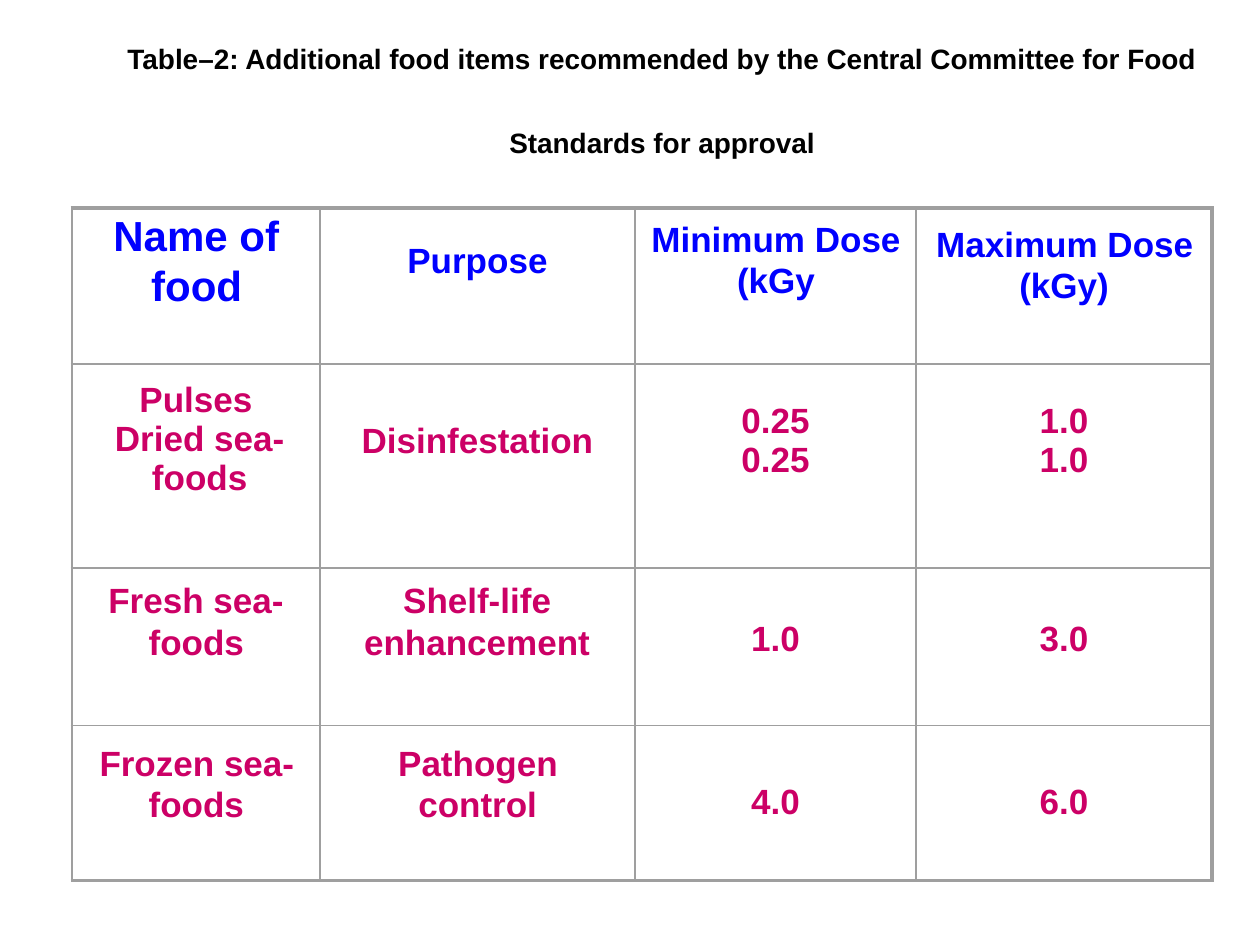
import pptx
import pptx.dml.color
import pptx.enum.text
import pptx.oxml
import pptx.oxml.ns
import pptx.util

Inches, Pt = pptx.util.Inches, pptx.util.Pt
CENTER = pptx.enum.text.PP_ALIGN.CENTER
LEFT = pptx.enum.text.PP_ALIGN.LEFT
RGBColor = pptx.dml.color.RGBColor
BLACK = RGBColor(0x00, 0x00, 0x00)
BLUE = RGBColor(0x00, 0x00, 0xFF)
MAGENTA = RGBColor(0xCC, 0x00, 0x66)
GRAY = RGBColor(0x9F, 0x9F, 0x9F)

COLS = [1.97, 2.5, 2.23, 2.35]
ROWS = [1.24, 1.62, 1.25, 1.23]

# Each cell: lines, top margin, left margin, first-line indent, alignment
CELLS = [
    [(["Name of", "food"], 0.02, 0.63, -0.3, LEFT),
     (["Purpose"], 0.27, 0, 0, CENTER),
     (["Minimum Dose", "(kGy"], 0.08, 0.81, -0.68, LEFT),
     (["Maximum Dose", "(kGy)"], 0.12, 0.82, -0.66, LEFT)],
    [(["Pulses", "Dried sea-", "foods"], 0.13, 0.06, -0.2, CENTER),
     (["Disinfestation"], 0.46, 0, 0, CENTER),
     (["0.25", "0.25"], 0.3, 0, 0, CENTER),
     (["1.0", "1.0"], 0.3, 0, 0, CENTER)],
    [(["Fresh sea-", "foods"], 0.09, 0.61, -0.32, LEFT),
     (["Shelf-life", "enhancement"], 0.09, 0.35, 0.31, LEFT),
     (["1.0"], 0.41, 0, 0, CENTER),
     (["3.0"], 0.41, 0, 0, CENTER)],
    [(["Frozen sea-", "foods"], 0.13, 0.61, -0.39, LEFT),
     (["Pathogen", "control"], 0.13, 0.78, -0.16, LEFT),
     (["4.0"], 0.45, 0, 0, CENTER),
     (["6.0"], 0.45, 0, 0, CENTER)],
]


def add_run(p, text, size, color):
    r = p.add_run()
    r.text = text
    r.font.name = "Arial"
    r.font.size = Pt(size)
    r.font.bold = True
    r.font.color.rgb = color


def set_borders(cell, widths):
    """Draw the cell's borders; widths are points by side: L, R, T, B."""
    pr = cell._tc.get_or_add_tcPr()
    for i, (side, width) in enumerate(widths.items()):
        pr.insert(i, pptx.oxml.parse_xml(
            f'<a:ln{side} {pptx.oxml.ns.nsdecls("a")} w="{Pt(width)}">'
            f'<a:solidFill><a:srgbClr val="{GRAY}"/></a:solidFill></a:ln{side}>'))


prs = pptx.Presentation()
prs.slide_width, prs.slide_height = Inches(10), Inches(7.5)
s = prs.slides.add_slide(prs.slide_layouts[6])

# Title
sp = s.shapes.add_textbox(Inches(0.97), Inches(0.31), Inches(8.57), Inches(0.94))
tf = sp.text_frame
tf.word_wrap = True
tf.margin_left = tf.margin_right = tf.margin_bottom = 0
tf.margin_top = Inches(0.02)
p = tf.paragraphs[0]
p.alignment = CENTER
add_run(p, "Table–2: Additional food items recommended by the Central Committee for Food",
        16, BLACK)
p = tf.add_paragraph()
p.alignment = CENTER
p.space_before = Pt(29)
add_run(p, "Standards for approval", 16, BLACK)

# Dose table
table = s.shapes.add_table(len(ROWS), len(COLS), Inches(0.57), Inches(1.65),
                           Inches(sum(COLS)), Inches(sum(ROWS))).table
table.first_row = table.horz_banding = False
for column, width in zip(table.columns, COLS):
    column.width = Inches(width)
for row, height in zip(table.rows, ROWS):
    row.height = Inches(height)

for i, row in enumerate(CELLS):
    for j, (lines, top, left, indent, align) in enumerate(row):
        cell = table.cell(i, j)
        cell.margin_left = cell.margin_right = cell.margin_bottom = 0
        cell.margin_top = Inches(top)
        cell.fill.background()
        set_borders(cell, {"L": 1.5 if j == 0 else 1,
                           "R": 2.25 if j == len(COLS) - 1 else 1,
                           "T": 2.25 if i == 0 else 1,
                           "B": 2.25 if i == len(ROWS) - 1 else 1})
        size = 24 if i == j == 0 else 20
        p = cell.text_frame.paragraphs[0]
        p.alignment = align
        if align == LEFT:
            p.line_spacing = Pt(size * 1.19)
        pr = p._p.get_or_add_pPr()
        pr.set("marL", str(Inches(left)))
        pr.set("indent", str(Inches(indent)))
        for k, line in enumerate(lines):
            if k:
                p.add_line_break()
            add_run(p, line, size, BLUE if i == 0 else MAGENTA)

prs.save("out.pptx")
